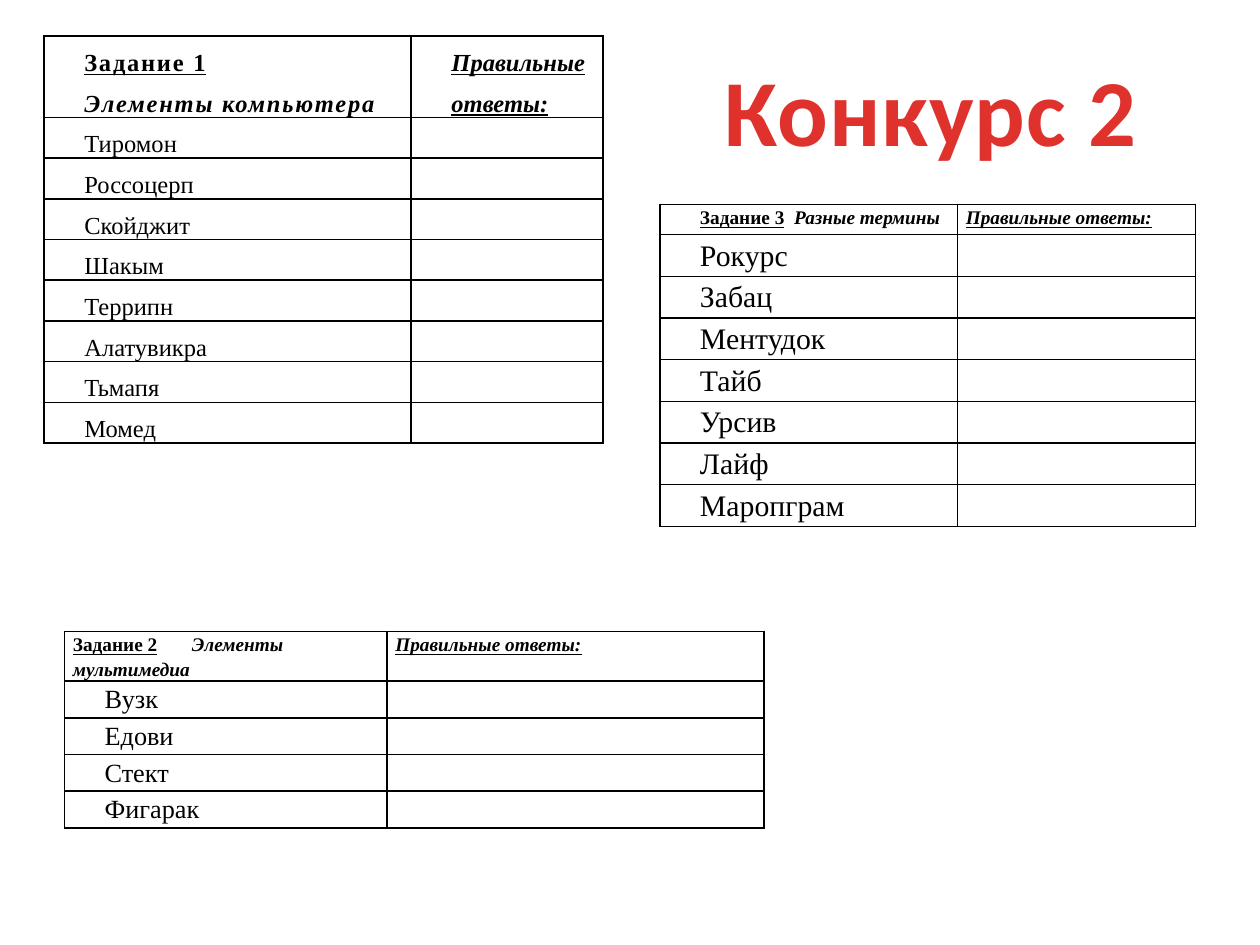
from lxml import etree
from pptx import Presentation
from pptx.dml.color import RGBColor
from pptx.enum import text
from pptx.oxml import ns
from pptx.util import Cm, Pt

BLACK = RGBColor(0x00, 0x00, 0x00)
RED = RGBColor(0xE0, 0x32, 0x2D)
INDENT = Cm(0.64)
TITLE = "Конкурс 2"
ANSWERS = "Правильные ответы:"

# Lengths are in centimetres, font sizes and letter spacing in points.
TASKS = [
    {
        "name": "Задание 1", "gap": "\v", "topic": "Элементы компьютера",
        "words": ["Тиромон", "Россоцерп", "Скойджит", "Шакым", "Террипн",
                  "Алатувикра", "Тьмапя", "Момед"],
        "position": (0.89, 0.73), "columns": (7.4, 3.87), "rows": (1.63, 0.82),
        "sizes": (14, 14), "line_spacing": 1.5, "letter_spacing": 1,
        "header_indents": (True, True),
    },
    {
        "name": "Задание 2", "gap": "\t", "topic": "Элементы мультимедиа",
        "words": ["Вузк", "Едови", "Стект", "Фигарак"],
        "position": (1.3, 12.73), "columns": (6.5, 7.6), "rows": (1, 0.74),
        "sizes": (11, 15), "line_spacing": 1.15, "letter_spacing": 0,
        "header_indents": (False, False), "tab": 2.4,
    },
    {
        "name": "Задание 3", "gap": "  ", "topic": "Разные термины",
        "words": ["Рокурс", "Забац", "Ментудок", "Тайб", "Урсив", "Лайф",
                  "Маропграм"],
        "position": (13.3, 4.12), "columns": (6, 4.8), "rows": (0.61, 0.84),
        "sizes": (11, 17), "line_spacing": 1.15, "letter_spacing": 0,
        "header_indents": (True, False),
    },
]


def add_run(paragraph, content, size, bold=False, italic=False,
            underline=False, letter_spacing=0):
    run = paragraph.add_run()
    run.text = content
    font = run.font
    font.name, font.size = "Times New Roman", Pt(size)
    font.bold, font.italic, font.underline = bold, italic, underline
    font.color.rgb = BLACK
    if letter_spacing:
        font._element.set("spc", str(int(letter_spacing * 100)))


def set_tab_stop(paragraph, position):
    properties = paragraph._p.get_or_add_pPr()
    tabs = etree.SubElement(properties, ns.qn("a:tabLst"))
    etree.SubElement(tabs, ns.qn("a:tab"), pos=str(position), algn="l")


def add_borders(cell):
    properties = cell._tc.get_or_add_tcPr()
    for side in ("lnL", "lnR", "lnT", "lnB"):
        line = etree.SubElement(properties, ns.qn(f"a:{side}"), w=str(Pt(1)))
        fill = etree.SubElement(line, ns.qn("a:solidFill"))
        etree.SubElement(fill, ns.qn("a:srgbClr"), val=str(BLACK))


def format_cell(cell, line_spacing, size, indented):
    """Draw the empty cell and return its paragraph, ready for runs."""
    cell.margin_left = cell.margin_right = Cm(0.17)
    cell.margin_top = cell.margin_bottom = 0
    add_borders(cell)
    cell.fill.background()
    paragraph = cell.text_frame.paragraphs[0]
    paragraph.line_spacing = line_spacing
    if indented:
        properties = paragraph._p.get_or_add_pPr()
        properties.set("marL", str(INDENT))
        properties.set("indent", "0")
    # An empty cell takes its line height from the end mark.
    paragraph._p.get_or_add_endParaRPr().set("sz", str(size * 100))
    return paragraph


def fill_header(task, title_cell, answer_cell):
    size, spacing = task["sizes"][0], task["line_spacing"]
    title_indent, answer_indent = task["header_indents"]
    letter_spacing = task["letter_spacing"]

    paragraph = format_cell(title_cell, spacing, size, title_indent)
    if "tab" in task:
        set_tab_stop(paragraph, Cm(task["tab"]))
    add_run(paragraph, task["name"], size, bold=True, underline=True,
            letter_spacing=letter_spacing)
    if task["gap"] == "\v":
        paragraph.add_line_break()
    else:
        add_run(paragraph, task["gap"], size, bold=True)
    add_run(paragraph, task["topic"], size, bold=True, italic=True,
            letter_spacing=letter_spacing)

    paragraph = format_cell(answer_cell, spacing, size, answer_indent)
    add_run(paragraph, ANSWERS, size, bold=True, italic=True, underline=True)


def add_task(slide, task):
    words, columns = task["words"], task["columns"]
    header_height, row_height = task["rows"]
    left, top = task["position"]
    height = header_height + row_height * len(words)
    table = slide.shapes.add_table(
        len(words) + 1, len(columns), Cm(left), Cm(top),
        Cm(sum(columns)), Cm(height)).table
    table.first_row = table.horz_banding = False
    for column, width in zip(table.columns, columns):
        column.width = Cm(width)
    for index, row in enumerate(table.rows):
        row.height = Cm(row_height if index else header_height)

    fill_header(task, table.cell(0, 0), table.cell(0, 1))
    size, spacing = task["sizes"][1], task["line_spacing"]
    for index, word in enumerate(words, start=1):
        paragraph = format_cell(table.cell(index, 0), spacing, size, True)
        add_run(paragraph, word, size)
        format_cell(table.cell(index, 1), 1, size, False)


def format_title(title):
    title.left, title.top = Cm(14.3), Cm(0.91)
    title.width, title.height = Cm(8.94), Cm(2.57)
    frame = title.text_frame
    frame.text = TITLE
    frame.word_wrap = False
    frame.auto_size = text.MSO_AUTO_SIZE.NONE
    frame.vertical_anchor = text.MSO_ANCHOR.MIDDLE
    paragraph = frame.paragraphs[0]
    paragraph.alignment = text.PP_ALIGN.CENTER
    font = paragraph.runs[0].font
    font.name, font.size, font.bold = "Calibri", Pt(54), True
    font.color.rgb = RED
    font._element.set("spc", "50")


def main():
    presentation = Presentation()
    presentation.slide_width, presentation.slide_height = Cm(25.4), Cm(19.05)
    slide = presentation.slides.add_slide(presentation.slide_layouts[5])
    format_title(slide.shapes.title)
    for task in TASKS:
        add_task(slide, task)
    presentation.save("out.pptx")


if __name__ == "__main__":
    main()
